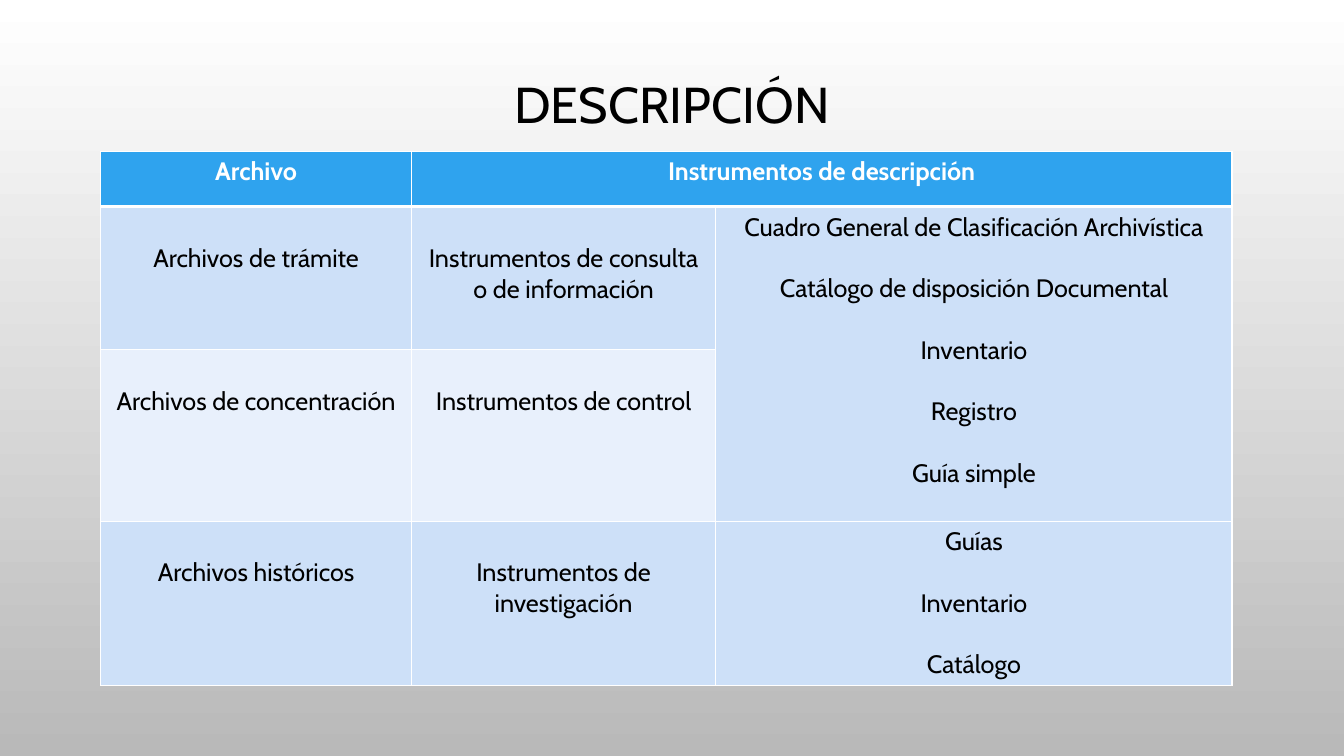
"""Builds a slide with a table of archives and their description instruments."""
from lxml.etree import SubElement
from pptx import Presentation
from pptx.dml.color import RGBColor
from pptx.enum.text import MSO_ANCHOR, PP_ALIGN
from pptx.oxml.ns import qn
from pptx.util import Inches, Pt


def color(value):
    return RGBColor.from_string(value)


def write(frame, lines, gap, size, bold, ink):
    for index, line in enumerate(lines):
        para = frame.paragraphs[0] if index == 0 else frame.add_paragraph()
        para.alignment = PP_ALIGN.CENTER
        if index:
            para.space_before = Pt(gap)
        span = para.add_run()
        span.text = line
        for name, value in {"name": "Cabin", "size": Pt(size), "bold": bold}.items():
            setattr(span.font, name, value)
        span.font.color.rgb = color(ink)


deck = Presentation()
deck.slide_width, deck.slide_height = Inches(13.33), Inches(7.5)
page = deck.slides.add_slide(deck.slide_layouts[6])

backdrop = page.background.fill
backdrop.gradient()
backdrop.gradient_angle = 270
for stop, position, shade in zip(backdrop.gradient_stops, (0, 1), ("FFFFFF", "B9B9B9")):
    stop.position = position
    stop.color.rgb = color(shade)

title = page.shapes.add_textbox(Inches(1), Inches(0.19), Inches(11.33), Inches(1.75)).text_frame
title.word_wrap = True
title.vertical_anchor = MSO_ANCHOR.MIDDLE
write(title, ["DESCRIPCIÓN"], 0, 36, False, "000000")
title.paragraphs[0].line_spacing = 0.9

widths = [3.08, 3.02, 5.12]
heights = [0.55, 1.42, 1.7, 1.63]
rows = [
    [["Archivo"], ["Instrumentos de descripción"], []],
    [["Archivos de trámite"], ["Instrumentos de consulta o de información"],
     ["Cuadro General de Clasificación Archivística", "Catálogo de disposición Documental",
      "Inventario", "Registro", "Guía simple"]],
    [["Archivos de concentración"], ["Instrumentos de control"], []],
    [["Archivos históricos"], ["Instrumentos de investigación"],
     ["Guías", "Inventario", "Catálogo"]],
]
fills = ["2FA3EE", "CDE0F8", "E8F0FC", "CDE0F8"]

table = page.shapes.add_table(len(rows), len(widths), Inches(1), Inches(1.5),
                              Inches(sum(widths)), Inches(sum(heights))).table
for column, width in zip(table.columns, widths):
    column.width = Inches(width)
for row, height in zip(table.rows, heights):
    row.height = Inches(height)
table.cell(0, 1).merge(table.cell(0, 2))
table.cell(1, 2).merge(table.cell(2, 2))

for r, texts in enumerate(rows):
    for c, lines in enumerate(texts):
        cell = table.cell(r, c)
        header = r == 0
        if not header and c < 2:
            cell.margin_top = Inches(0.36)
        write(cell.text_frame, lines, 22, 18, header, "FFFFFF" if header else "000000")
        properties = cell._tc.get_or_add_tcPr()
        for side in ("lnL", "lnR", "lnT", "lnB"):
            thick = (r, side) in ((0, "lnB"), (1, "lnT"))
            line = SubElement(properties, qn(f"a:{side}"), w=str(Pt(3 if thick else 1)))
            SubElement(SubElement(line, qn("a:solidFill")), qn("a:srgbClr"), val="FFFFFF")
        cell.fill.solid()
        cell.fill.fore_color.rgb = color(fills[r])

deck.save("out.pptx")
